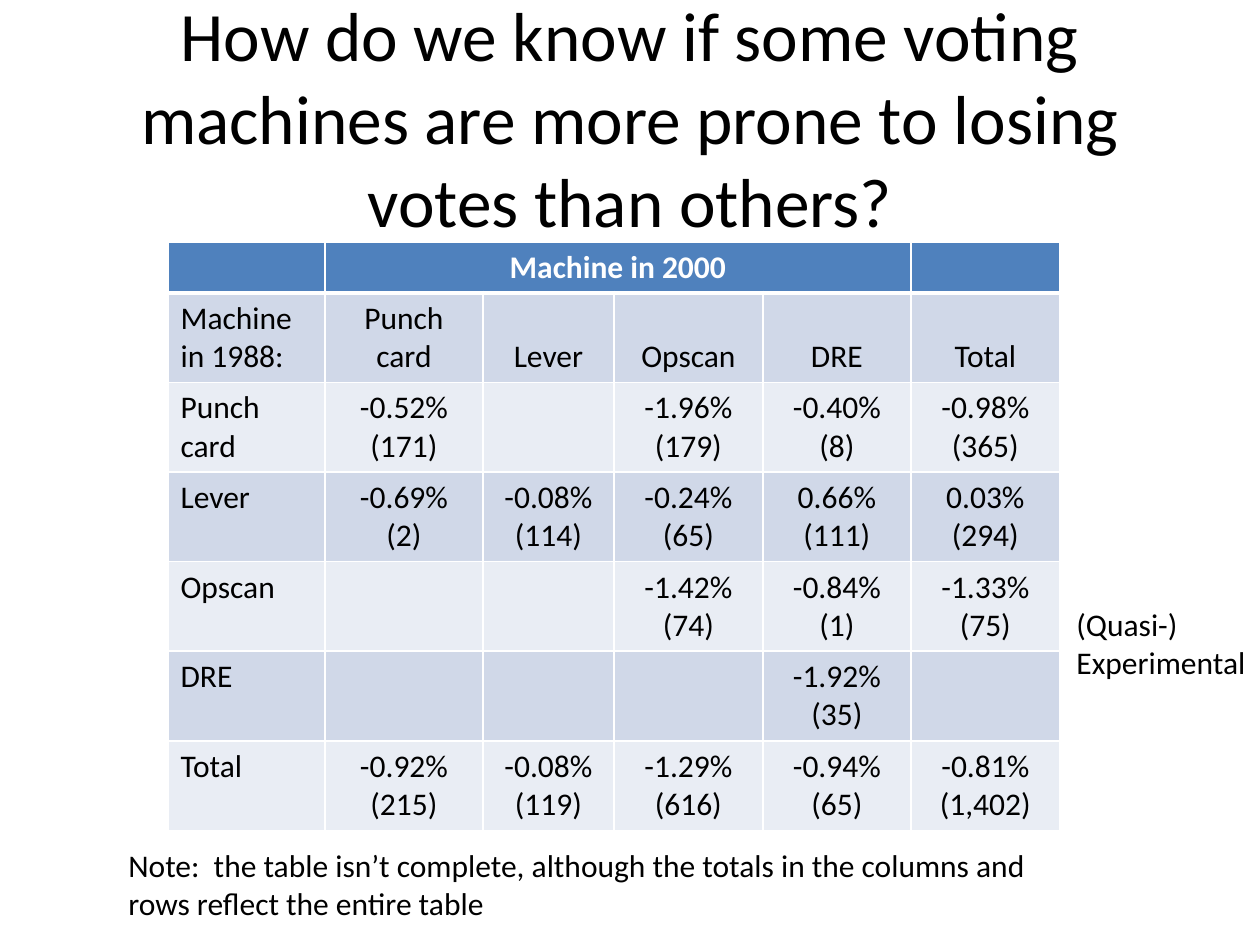
import dataclasses
import typing

import pptx
import pptx.dml.color
import pptx.enum.text
import pptx.oxml
import pptx.oxml.ns
import pptx.util

EMU_PER_PX = 914400 / 126
ALIGN = pptx.enum.text.PP_ALIGN
ANCHOR = pptx.enum.text.MSO_ANCHOR


@dataclasses.dataclass(frozen=True)
class Theme:
    font: str = "Calibri"
    title_size: float = 39.6
    body_size: float = 18
    ink: str = "000000"
    paper: str = "FFFFFF"
    header: str = "4F81BD"
    bands: tuple[str, str] = ("D0D8E8", "E9EDF4")
    rule: float = 1
    header_rule: float = 3


@dataclasses.dataclass(frozen=True)
class Box:
    left: int
    top: int
    width: int
    height: int


@dataclasses.dataclass(frozen=True)
class Label:
    box: Box
    text: str
    size: float
    align: typing.Any = ALIGN.LEFT
    anchor: typing.Any = ANCHOR.TOP
    wrap: bool = True


THEME = Theme()

LABELS = (
    Label(Box(116, 840, 966, 89),
          "Note:  the table isn’t complete, although the totals in the columns "
          "and rows reflect the entire table", THEME.body_size),
    Label(Box(63, 38, 1134, 157),
          "How do we know if some voting machines are more prone to losing "
          "votes than others?", THEME.title_size, ALIGN.CENTER, ANCHOR.MIDDLE),
    Label(Box(1064, 599, 196, 89), "(Quasi-)\nExperimental", THEME.body_size,
          wrap=False),
)

TABLE_LEFT, TABLE_TOP = 168, 242
COLUMN_WIDTHS = (157, 158, 131, 149, 148, 149)
HEADER_HEIGHT, ROW_HEIGHT = 51, 89
ROWS = (
    ("", "Machine in 2000", "", "", "", ""),
    ("Machine in 1988:", "Punch card", "Lever", "Opscan", "DRE", "Total"),
    ("Punch card", "-0.52%\n(171)", "", "-1.96%\n(179)", "-0.40%\n(8)", "-0.98%\n(365)"),
    ("Lever", "-0.69%\n(2)", "-0.08%\n(114)", "-0.24%\n(65)", "0.66%\n(111)", "0.03%\n(294)"),
    ("Opscan", "", "", "-1.42%\n(74)", "-0.84%\n(1)", "-1.33%\n(75)"),
    ("DRE", "", "", "", "-1.92%\n(35)", ""),
    ("Total", "-0.92%\n(215)", "-0.08%\n(119)", "-1.29%\n(616)", "-0.94%\n(65)", "-0.81%\n(1,402)"),
)


def px(length: int) -> pptx.util.Emu:
    return pptx.util.Emu(round(length * EMU_PER_PX))


def rgb(value: str) -> pptx.dml.color.RGBColor:
    return pptx.dml.color.RGBColor.from_string(value)


def apply(target: typing.Any, values: dict[str, typing.Any]) -> None:
    for name, value in values.items():
        setattr(target, name, value)


def write(frame: typing.Any, text: str, size: float, align: typing.Any,
          color: str = THEME.ink, bold: bool = False) -> None:
    font_values = {"name": THEME.font, "size": pptx.util.Pt(size), "bold": bold}
    for index, line in enumerate(text.split("\n")):
        para = frame.add_paragraph() if index else frame.paragraphs[0]
        para.alignment = align
        apply(para.font, font_values)
        if line:
            span = para.add_run()
            span.text = line
            apply(span.font, font_values)
            span.font.color.rgb = rgb(color)


def add_label(page: typing.Any, label: Label) -> None:
    shape = page.shapes.add_textbox(*map(px, dataclasses.astuple(label.box)))
    apply(shape.text_frame, {"word_wrap": label.wrap, "vertical_anchor": label.anchor})
    write(shape.text_frame, label.text, label.size, label.align)


def add_borders(cell: typing.Any, widths: dict[str, float]) -> None:
    properties = cell._tc.get_or_add_tcPr()
    for index, (side, width) in enumerate(widths.items()):
        properties.insert(index, pptx.oxml.parse_xml(
            f'<a:{side} {pptx.oxml.ns.nsdecls("a")} w="{pptx.util.Pt(width)}">'
            f'<a:solidFill><a:srgbClr val="{THEME.paper}"/></a:solidFill></a:{side}>'))


def fill_cell(cell: typing.Any, row: int, column: int, text: str) -> None:
    is_header = row == 0
    cell.fill.solid()
    cell.fill.fore_color.rgb = rgb(THEME.header if is_header else THEME.bands[(row - 1) % 2])
    cell.vertical_anchor = ANCHOR.BOTTOM if row == 1 else ANCHOR.TOP
    write(cell.text_frame, text, THEME.body_size,
          ALIGN.CENTER if column else ALIGN.LEFT,
          THEME.paper if is_header else THEME.ink, is_header)
    add_borders(cell, {
        "lnL": THEME.rule,
        "lnR": THEME.rule,
        "lnT": THEME.header_rule if row == 1 else THEME.rule,
        "lnB": THEME.header_rule if is_header else THEME.rule,
    })


def add_machine_table(page: typing.Any) -> None:
    heights = [HEADER_HEIGHT] + [ROW_HEIGHT] * (len(ROWS) - 1)
    box = Box(TABLE_LEFT, TABLE_TOP, sum(COLUMN_WIDTHS), sum(heights))
    table = page.shapes.add_table(len(ROWS), len(COLUMN_WIDTHS),
                                  *map(px, dataclasses.astuple(box))).table
    for column, width in zip(table.columns, COLUMN_WIDTHS):
        column.width = px(width)
    for row, height in zip(table.rows, heights):
        row.height = px(height)
    for row, texts in enumerate(ROWS):
        for column, text in enumerate(texts):
            fill_cell(table.cell(row, column), row, column, text)
    table.cell(0, 1).merge(table.cell(0, 4))


def main() -> None:
    deck = pptx.Presentation()
    apply(deck, {"slide_width": px(1260), "slide_height": px(945)})
    page = deck.slides.add_slide(deck.slide_layouts[6])
    add_machine_table(page)
    for label in LABELS:
        add_label(page, label)
    deck.save("out.pptx")


if __name__ == "__main__":
    main()
